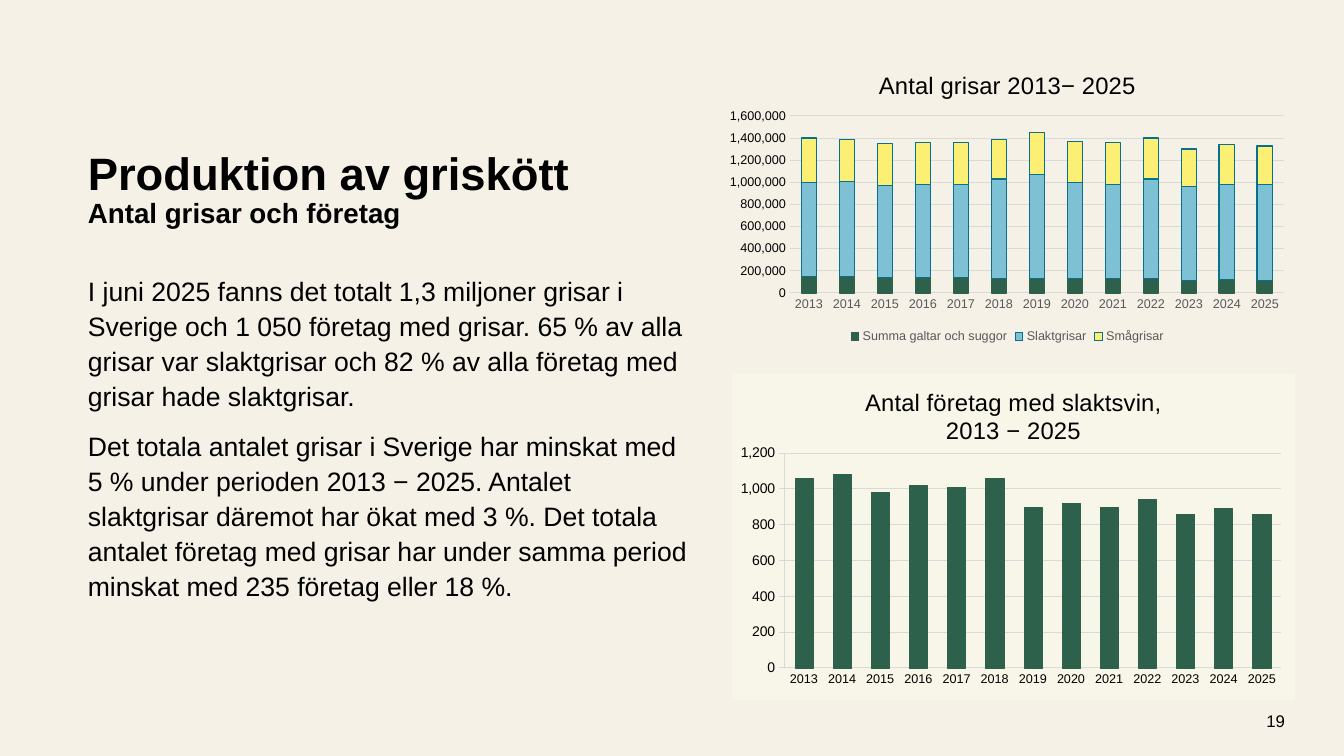
from lxml import etree
from pptx import Presentation
from pptx.chart.data import CategoryChartData
from pptx.dml.color import RGBColor
from pptx.enum.chart import XL_CHART_TYPE, XL_LEGEND_POSITION, XL_TICK_MARK
from pptx.enum.text import MSO_ANCHOR, PP_ALIGN
from pptx.oxml import parse_xml
from pptx.oxml.ns import nsdecls, qn
from pptx.util import Emu, Pt

EMU_PER_PX = 914400 / 100.8
FONT = "Arial"
BLACK, GREY, GRID = "000000", "595959", "D9D9D9"
GREEN, BLUE, YELLOW, TEAL = "2E614C", "7FC1D4", "FBEF74", "07708C"
YEARS = [str(year) for year in range(2013, 2026)]

PIGS = [
    ("Summa galtar och suggor", GREEN, GREEN,
     [150, 150, 140, 140, 140, 130, 130, 130, 130, 130, 110, 120, 110]),
    ("Slaktgrisar", BLUE, TEAL,
     [850, 860, 830, 840, 840, 900, 940, 870, 850, 900, 850, 860, 870]),
    ("Smågrisar", YELLOW, TEAL,
     [400, 380, 380, 380, 380, 360, 380, 370, 380, 370, 340, 360, 350]),
]
COMPANIES = [1060, 1080, 980, 1020, 1010, 1060, 900, 920, 900, 940, 860, 890, 860]
BODY = [
    "I juni 2025 fanns det totalt 1,3 miljoner grisar i Sverige och 1 050 företag med "
    "grisar. 65 % av alla grisar var slaktgrisar och 82 % av alla företag med grisar "
    "hade slaktgrisar.",
    "Det totala antalet grisar i Sverige har minskat med 5 % under perioden 2013 − 2025. "
    "Antalet slaktgrisar däremot har ökat med 3 %. Det totala antalet företag med grisar "
    "har under samma period minskat med 235 företag eller 18 %.",
]


def px(length):
    return Emu(round(length * EMU_PER_PX))


def color(value):
    return RGBColor.from_string(value)


def set_font(font, size, ink=BLACK, bold=False):
    font.name, font.size, font.bold = FONT, Pt(size), bold
    font.color.rgb = color(ink)


def set_line(line, ink, width):
    line.color.rgb = color(ink)
    line.width = Pt(width)


def add_frame(slide, *box):
    frame = slide.shapes.add_textbox(*map(px, box)).text_frame
    frame.word_wrap = True
    return frame


def add_heading(slide):
    heading = add_frame(slide, 78, 146, 547, 109).paragraphs[0]
    heading.line_spacing = 0.9
    title = heading.add_run()
    title.text = "Produktion av griskött"
    set_font(title.font, 32.4, bold=True)
    heading.add_line_break()
    subtitle = heading.add_run()
    subtitle.text = "Antal grisar och företag"
    set_font(subtitle.font, 19.8, bold=True)


def add_body(slide):
    body = add_frame(slide, 78, 267, 622, 389)
    body.text = "\n".join(BODY)
    for index, paragraph in enumerate(body.paragraphs):
        paragraph.line_spacing = 1.1
        paragraph.space_before = Pt(10 if index else 0)
        set_font(paragraph.font, 19)


def add_page_number(slide):
    frame = add_frame(slide, 1178, 701, 117, 40)
    frame.vertical_anchor = MSO_ANCHOR.MIDDLE
    number = frame.paragraphs[0]
    number.text = "19"
    number.alignment = PP_ALIGN.RIGHT
    set_font(number.font, 12)


def place_plot(chart, box, plot):
    left, top, width, height = box
    fractions = {
        "x": (plot[0] - left) / width,
        "y": (plot[1] - top) / height,
        "w": plot[2] / width,
        "h": plot[3] / height,
    }
    plot_area = chart.element.find(".//" + qn("c:plotArea"))
    layout = plot_area.find(qn("c:layout"))
    if layout is not None:
        plot_area.remove(layout)
    layout = parse_xml(f"<c:layout {nsdecls('c')}><c:manualLayout/></c:layout>")
    settings = {"layoutTarget": "inner", "xMode": "edge", "yMode": "edge"}
    settings.update({key: f"{value:.3f}" for key, value in fractions.items()})
    for key, value in settings.items():
        etree.SubElement(layout[0], qn("c:" + key)).set("val", value)
    plot_area.insert(0, layout)


def fill_chart(chart, fill):
    chart.element.find(qn("c:chart")).addnext(parse_xml(
        f'<c:spPr {nsdecls("c", "a")}><a:solidFill><a:srgbClr val="{fill}"/>'
        "</a:solidFill><a:ln><a:noFill/></a:ln></c:spPr>"))


def add_column_chart(slide, kind, box, plot, title, series, line_width,
                     gap, overlap, top_value, step):
    data = CategoryChartData(number_format="#,##0")
    data.categories = YEARS
    for name, _, _, values in series:
        data.add_series(name, values)
    chart = slide.shapes.add_chart(kind, *map(px, box), data).chart
    set_font(chart.font, 10)
    chart.has_legend = False
    chart.has_title = True
    chart.chart_title.include_in_layout = False
    chart.chart_title.text_frame.text = title
    for paragraph in chart.chart_title.text_frame.paragraphs:
        set_font(paragraph.font, 17)

    columns = chart.plots[0]
    columns.gap_width, columns.overlap = gap, overlap
    columns.vary_by_categories = False
    for bars, (_, fill, outline, _) in zip(columns.series, series):
        bars.format.fill.solid()
        bars.format.fill.fore_color.rgb = color(fill)
        set_line(bars.format.line, outline, line_width)

    years, amounts = chart.category_axis, chart.value_axis
    for axis in (years, amounts):
        axis.major_tick_mark = axis.minor_tick_mark = XL_TICK_MARK.NONE
        set_line(axis.format.line, GRID, 0.75)
        set_font(axis.tick_labels.font, 9)
    amounts.minimum_scale, amounts.maximum_scale = 0, top_value
    amounts.major_unit = step
    amounts.has_major_gridlines = True
    set_line(amounts.major_gridlines.format.line, GRID, 0.75)
    amounts.tick_labels.number_format = "#,##0"
    amounts.tick_labels.number_format_is_linked = False
    place_plot(chart, box, plot)
    return chart


def add_pig_chart(slide):
    series = [(name, fill, outline, [1000 * value for value in thousands])
              for name, fill, outline, thousands in PIGS]
    chart = add_column_chart(
        slide, XL_CHART_TYPE.COLUMN_STACKED, (719, 54, 577, 294), (790, 116, 494, 177),
        "Antal grisar 2013− 2025", series, 1, 150, 100, 1600000, 200000)
    chart.value_axis.format.line.fill.background()
    set_font(chart.category_axis.tick_labels.font, 9, GREY)
    chart.has_legend = True
    chart.legend.position = XL_LEGEND_POSITION.BOTTOM
    chart.legend.include_in_layout = False
    set_font(chart.legend.font, 9, GREY)


def add_company_chart(slide):
    chart = add_column_chart(
        slide, XL_CHART_TYPE.COLUMN_CLUSTERED, (732, 373, 563, 327), (785, 453, 496, 215),
        "Antal företag med slaktsvin,\n2013 − 2025",
        [("Series 1", GREEN, GREEN, COMPANIES)], 0.25, 110, -25, 1200, 200)
    chart.value_axis.major_tick_mark = XL_TICK_MARK.OUTSIDE
    set_font(chart.value_axis.tick_labels.font, 10)
    fill_chart(chart, "F8F6E8")


def main():
    deck = Presentation()
    deck.slide_width, deck.slide_height = px(1344), px(756)
    slide = deck.slides.add_slide(deck.slide_layouts[6])
    slide.background.fill.solid()
    slide.background.fill.fore_color.rgb = color("F5F1E7")
    add_heading(slide)
    add_page_number(slide)
    add_body(slide)
    add_pig_chart(slide)
    add_company_chart(slide)
    deck.save("out.pptx")


if __name__ == "__main__":
    main()
